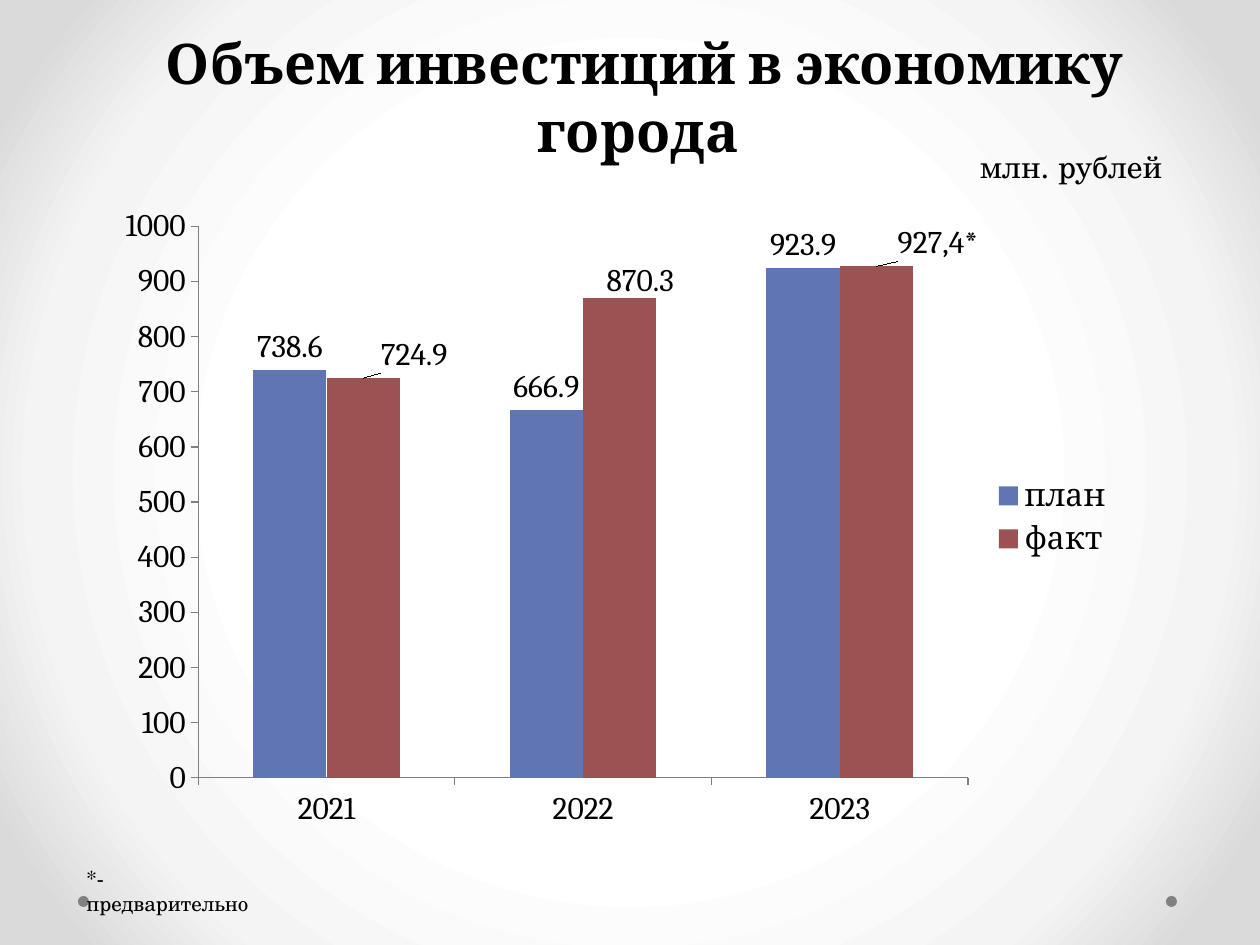
from dataclasses import dataclass

from pptx import Presentation
from pptx.chart.data import CategoryChartData
from pptx.dml.color import RGBColor
from pptx.enum.chart import XL_CHART_TYPE, XL_LABEL_POSITION, XL_LEGEND_POSITION, XL_TICK_MARK
from pptx.enum.shapes import MSO_SHAPE
from pptx.enum.text import MSO_ANCHOR, PP_ALIGN
from pptx.oxml import parse_xml
from pptx.oxml.ns import nsdecls
from pptx.util import Pt

SCALE = 914400 // 126


@dataclass(frozen=True)
class Theme:
    """Colours, fonts and type sizes of the slide."""
    ink: str = "000000"
    dot: str = "808080"
    plan: str = "6076B4"
    fact: str = "9C5252"
    stops: tuple = ((50, "FFFFFF"), (76, "F4F4F4"), (92, "DADADA"))
    head: str = "Cambria"
    body: str = "TeX Gyre Schola"
    title: int = 32
    text: int = 18
    note: int = 12


THEME = Theme()


def px(*lengths):
    """Turn pixel lengths into EMU."""
    return [n * SCALE for n in lengths]


def set_font(font, name, size, bold=False):
    """Apply the format values to a font."""
    for key, value in {"name": name, "size": Pt(size), "bold": bold}.items():
        setattr(font, key, value)
    font.color.rgb = RGBColor.from_string(THEME.ink)


def add_background(slide):
    """Fill the slide with a radial gradient."""
    stops = "".join(
        f'<a:gs pos="{pos * 1000}"><a:srgbClr val="{color}"/></a:gs>' for pos, color in THEME.stops)
    slide.background.fill.solid()
    bg_pr = slide.background._cSld.bg.bgPr
    bg_pr.replace(bg_pr[0], parse_xml(
        f'<a:gradFill {nsdecls("a")} rotWithShape="1"><a:gsLst>{stops}</a:gsLst>'
        '<a:path path="circle"><a:fillToRect l="50000" t="50000" r="50000" b="50000"/></a:path>'
        '</a:gradFill>'))


def add_dots(slide, box):
    """Put a round dot at each end of the box."""
    x, y, w, h = box
    for left in (x, x + w - h):
        sp = slide.shapes.add_shape(MSO_SHAPE.OVAL, *px(left, y, h, h))
        sp.shadow.inherit = False
        sp.fill.solid()
        sp.fill.fore_color.rgb = RGBColor.from_string(THEME.dot)
        sp.line.fill.background()


def add_text(slide, box, text, name, size, bold=False,
             align=PP_ALIGN.LEFT, anchor=MSO_ANCHOR.TOP):
    """Write one paragraph in the box."""
    tf = slide.shapes.add_textbox(*px(*box)).text_frame
    for key, value in {"word_wrap": True, "vertical_anchor": anchor}.items():
        setattr(tf, key, value)
    p = tf.paragraphs[0]
    p.alignment = align
    r = p.add_run()
    r.text = text
    set_font(r.font, name, size, bold)


def shift_labels(series, shifts, custom):
    """Offset the point labels of a series and give some their own text."""
    for i, (dx, dy) in enumerate(shifts):
        label = series.points[i].data_label
        if i in custom:
            p = label.text_frame.paragraphs[0]
            r = p.add_run()
            r.text = custom[i]
            set_font(r.font, THEME.head, THEME.text)
        else:
            set_font(label.font, THEME.head, THEME.text)
        label.position = XL_LABEL_POSITION.OUTSIDE_END
        idx = series._element.xpath(f'c:dLbls/c:dLbl/c:idx[@val="{i}"]')[0]
        for old in idx.getparent().xpath("c:layout"):
            idx.getparent().remove(old)
        idx.addnext(parse_xml(
            f'<c:layout {nsdecls("c")}><c:manualLayout>'
            f'<c:x val="{dx}"/><c:y val="{dy}"/></c:manualLayout></c:layout>'))


def add_investment_chart(slide, box):
    """Draw planned and actual investment as clustered columns."""
    data = CategoryChartData()
    data.categories = ["2021", "2022", "2023"]
    data.add_series("план", (738.6, 666.9, 923.9))
    data.add_series("факт", (724.9, 870.3, 927.4))
    chart = slide.shapes.add_chart(XL_CHART_TYPE.COLUMN_CLUSTERED, *px(*box), data).chart
    set_font(chart.font, THEME.head, THEME.text)
    chart.has_title = False
    chart.has_legend = True
    chart.legend.position = XL_LEGEND_POSITION.RIGHT
    chart.legend.include_in_layout = False
    values = {"minimum_scale": 0, "maximum_scale": 1000, "major_unit": 100}
    for axis, extra in ((chart.category_axis, {}), (chart.value_axis, values)):
        marks = {"has_major_gridlines": False, "major_tick_mark": XL_TICK_MARK.OUTSIDE,
                 "minor_tick_mark": XL_TICK_MARK.NONE}
        for key, value in {**marks, **extra}.items():
            setattr(axis, key, value)
        axis.format.line.color.rgb = RGBColor.from_string(THEME.dot)
    plot = chart.plots[0]
    for key, value in {"gap_width": 150, "overlap": 0, "vary_by_categories": False}.items():
        setattr(plot, key, value)
    for series, color in zip(plot.series, (THEME.plan, THEME.fact)):
        series.format.fill.solid()
        series.format.fill.fore_color.rgb = RGBColor.from_string(color)
        labels = series.data_labels
        labels.show_value = True
        labels.position = XL_LABEL_POSITION.OUTSIDE_END
        set_font(labels.font, THEME.head, THEME.text)
    shift_labels(plot.series[1], ((0.05, 0), (0.02, 0.01), (0.06, 0)), {2: "927,4*"})


def build_slide(prs):
    """Lay out the investment slide."""
    slide = prs.slides.add_slide(prs.slide_layouts[6])
    add_background(slide)
    add_dots(slide, (78, 896, 1099, 11))
    add_text(slide, (49, 37, 1191, 118), "Объем инвестиций в экономику города ",
             THEME.head, THEME.title, True, PP_ALIGN.CENTER, MSO_ANCHOR.MIDDLE)
    add_investment_chart(slide, (105, 195, 1022, 645))
    add_text(slide, (937, 141, 277, 50), "млн. рублей ", THEME.body, THEME.text,
             align=PP_ALIGN.CENTER)
    add_text(slide, (74, 859, 193, 38), "*- предварительно", THEME.body, THEME.note)


def main():
    """Build and save the presentation."""
    prs = Presentation()
    prs.slide_width, prs.slide_height = px(1260, 945)
    build_slide(prs)
    prs.save("out.pptx")


if __name__ == "__main__":
    main()
